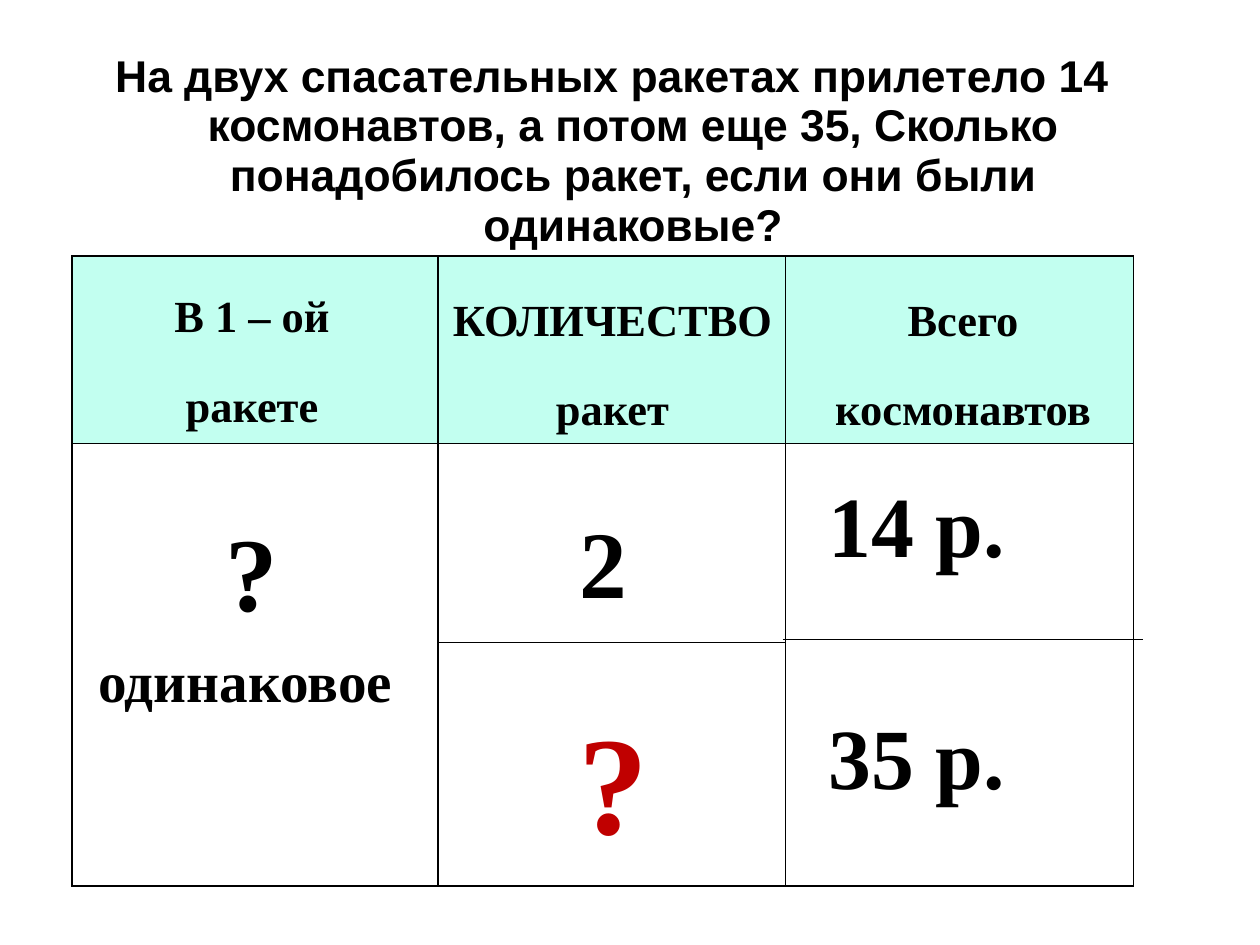
from lxml import etree
from pptx import Presentation
from pptx.dml.color import RGBColor
from pptx.enum.shapes import MSO_CONNECTOR
from pptx.enum.text import MSO_ANCHOR, MSO_AUTO_SIZE, PP_ALIGN
from pptx.oxml.ns import qn
from pptx.util import Cm, Pt

CENTER, LEFT = PP_ALIGN.CENTER, PP_ALIGN.LEFT
TOP = MSO_ANCHOR.TOP
STRAIGHT = MSO_CONNECTOR.STRAIGHT
NO_FIT, GROW = MSO_AUTO_SIZE.NONE, MSO_AUTO_SIZE.SHAPE_TO_FIT_TEXT
BLACK, RED, MINT, WHITE = "000000", "C00000", "C2FFF0", "FFFFFF"
SERIF, SANS = "Times New Roman", "Arial"


def color(value):
    return RGBColor.from_string(value)


def apply(target, values):
    for name, value in values.items():
        setattr(target, name, value)


class Page:
    """Holds the current slide and its text style."""

    def __init__(self, deck):
        self.slide = deck.slides.add_slide(deck.slide_layouts[1])
        self.shapes = self.slide.shapes
        title = self.shapes.title
        title.element.getparent().remove(title.element)

    def place(self, shape, left, top, width, height):
        apply(shape, {"left": Cm(left), "top": Cm(top),
                      "width": Cm(width), "height": Cm(height)})

    def style(self, para, size, font, ink, **layout):
        apply(para, layout)
        apply(para.font, {"size": Pt(size), "name": font, "bold": True})
        para.font.color.rgb = color(ink)

    def problem(self, text, *area):
        body = self.slide.placeholders[1]
        self.place(body, *area)
        frame = body.text_frame
        apply(frame, {"margin_left": 0, "margin_top": Cm(0.08),
                      "margin_right": 0, "margin_bottom": 0,
                      "auto_size": NO_FIT, "vertical_anchor": TOP})
        frame.text = text
        para = frame.paragraphs[0]
        settings = para._p.get_or_add_pPr()
        settings.set("marL", str(Cm(0.95)))
        settings.set("indent", str(-Cm(0.95)))
        etree.SubElement(settings, qn("a:buNone"))
        self.style(para, 28, SANS, BLACK, alignment=CENTER, line_spacing=0.93,
                   space_before=Pt(0), space_after=Pt(14.2))

    def label(self, lines, area, size, ink=BLACK, wrap=False,
              alignment=CENTER, line_spacing=1.5, after=6):
        box = self.shapes.add_textbox(*map(Cm, area))
        frame = box.text_frame
        frame.text = "\n".join(lines)
        apply(frame, {"word_wrap": wrap, "auto_size": GROW})
        for para in frame.paragraphs:
            self.style(para, size, SERIF, ink, alignment=alignment,
                       line_spacing=line_spacing, space_after=Pt(after))

    def border(self, cell):
        settings = cell._tc.get_or_add_tcPr()
        for side in ("lnL", "lnR", "lnT", "lnB"):
            line = etree.SubElement(settings, qn("a:" + side), w=str(Pt(1)))
            fill = etree.SubElement(line, qn("a:solidFill"))
            etree.SubElement(fill, qn("a:srgbClr"), val=BLACK)

    def grid(self, left, top, widths, heights):
        frame = self.shapes.add_table(
            len(heights), len(widths), Cm(left), Cm(top),
            Cm(sum(widths)), Cm(sum(heights)))
        table = frame.table
        apply(table, {"first_row": False, "horz_banding": False})
        for column, width in zip(table.columns, widths):
            column.width = Cm(width)
        for index, (row, height) in enumerate(zip(table.rows, heights)):
            row.height = Cm(height)
            for cell in row.cells:
                self.border(cell)
                cell.fill.solid()
                cell.fill.fore_color.rgb = color(WHITE if index else MINT)
        return table

    def rule(self, left, right, top):
        line = self.shapes.add_connector(
            STRAIGHT, Cm(left), Cm(top), Cm(right), Cm(top))
        line.line.color.rgb = color(BLACK)
        line.line.width = Pt(0.75)
        etree.SubElement(line._element.spPr, qn("a:effectLst"))


def main():
    deck = Presentation()
    apply(deck, {"slide_width": Cm(28), "slide_height": Cm(21)})
    page = Page(deck)
    page.problem("На двух спасательных ракетах прилетело 14 космонавтов, "
                 "а потом еще 35, Сколько понадобилось ракет, "
                 "если они были одинаковые?", 0.99, 1.09, 25.2, 13.84)

    table = page.grid(1.6, 5.69, (8.13, 7.73, 7.73), (4.17, 4.42, 5.41))
    for column in (0, 2):
        table.cell(1, column).merge(table.cell(2, column))
    page.rule(17.4, 25.4, 14.22)

    headings = (
        (("В 1 – ой", "ракете"), (1.4, 5.69, 8.4, 3.84)),
        (("КОЛИЧЕСТВО", "ракет"), (9.8, 5.77, 7.62, 4.06)),
        (("Всего", "космонавтов"), (17.4, 5.77, 8, 4.06)),
    )
    for lines, area in headings:
        page.label(lines, area, 28, wrap=True)

    page.label(["одинаковое"], (1.93, 13.46, 7.11, 2.29), 36, alignment=LEFT)
    page.label(["2"], (12.62, 9.8, 1.57, 3.63), 60)
    page.label(["?"], (12.6, 13.46, 2.08, 5.23), 88, RED)
    page.label(["?"], (4.75, 9.75, 1.68, 3.99), 66)
    for total, top in (("14 р.", 10.57), ("35 р.", 15.72)):
        page.label([total], (18.16, top, 4.95, 2.41), 54,
                   alignment=LEFT, line_spacing=0.93, after=0)
    deck.save("out.pptx")


if __name__ == "__main__":
    main()
